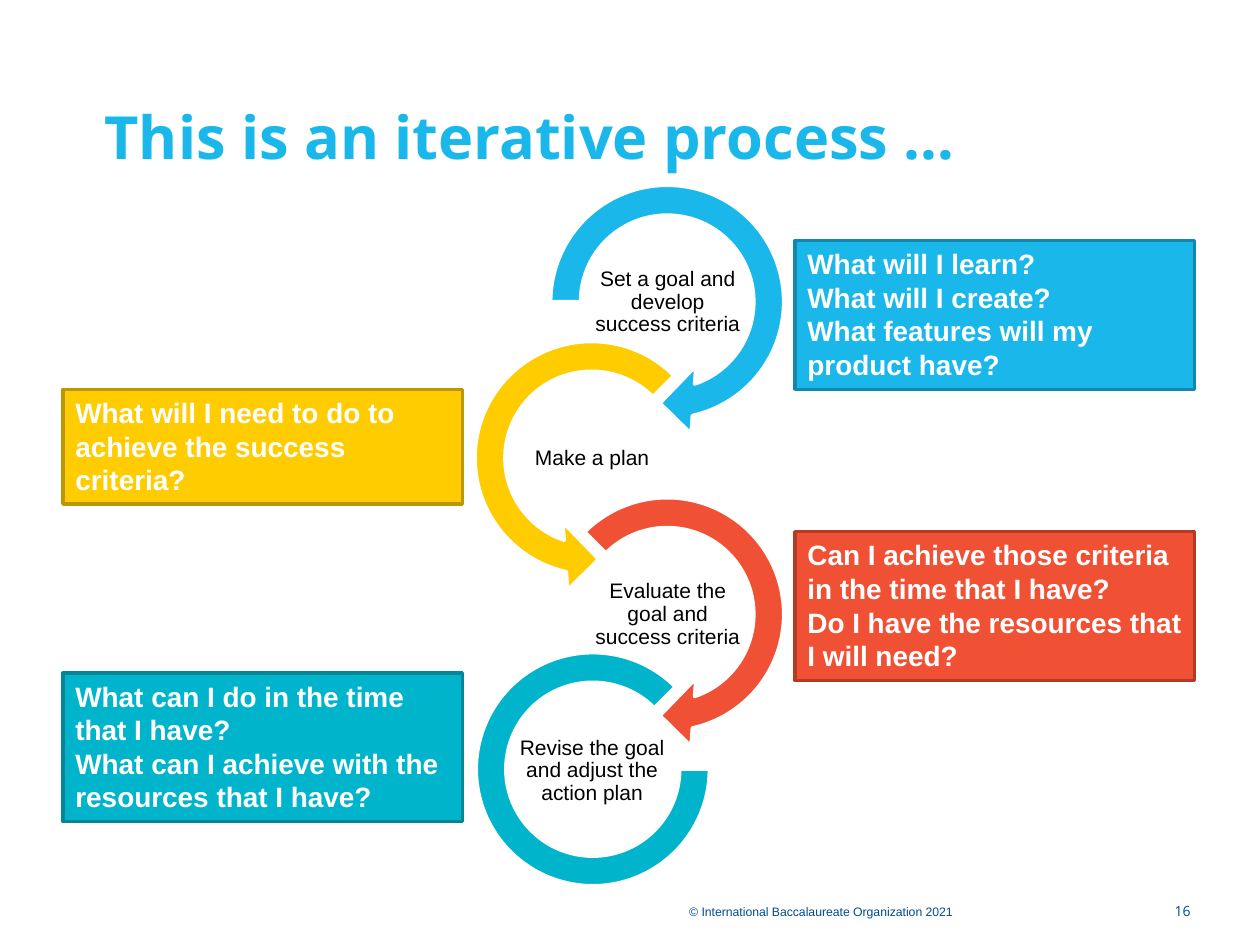
"""Builds the slide about an iterative goal-setting process."""
from pptx import Presentation
from pptx.dml.color import RGBColor
from pptx.enum import shapes, text
from pptx.util import Emu, Pt

SCALE = 9144
SHAPE = shapes.MSO_SHAPE
ALIGN = text.PP_ALIGN
ANCHOR = text.MSO_ANCHOR
NAVY, SKY, YELLOW, RED, TEAL = "004B8D", "1AB7EA", "FFCC00", "F05033", "00B5CB"
WHITE, BLACK = "FFFFFF", "000000"


def px(*lengths):
    return [Emu(length * SCALE) for length in lengths]


def color(value):
    return RGBColor.from_string(value)


class Deck:
    def __init__(self):
        self.presentation = Presentation()
        size = px(1000, 750)
        self.presentation.slide_width, self.presentation.slide_height = size
        self.slide = self.presentation.slides.add_slide(self.presentation.slide_layouts[5])

    def fill_text(self, frame, lines, size, ink, font="Arial", bold=False,
                  align=ALIGN.LEFT, spacing=1.0, anchor=ANCHOR.TOP, inset=None):
        frame.word_wrap = True
        frame.auto_size = text.MSO_AUTO_SIZE.NONE
        frame.vertical_anchor = anchor
        if inset is not None:
            frame.margin_left, frame.margin_top, frame.margin_right, frame.margin_bottom = px(*[inset] * 4)
        for index, line in enumerate(lines):
            paragraph = frame.add_paragraph() if index else frame.paragraphs[0]
            paragraph.alignment = align
            paragraph.line_spacing = spacing
            run = paragraph.add_run()
            run.text = line
            run.font.name, run.font.size, run.font.bold = font, Pt(size), bold
            run.font.color.rgb = color(ink)

    def title(self, box, wording):
        heading = self.slide.shapes.title
        heading.left, heading.top, heading.width, heading.height = px(*box)
        self.fill_text(heading.text_frame, [wording], 34, SKY, "Open Sans", True,
                       anchor=ANCHOR.BOTTOM, inset=0)

    def label(self, box, wording, size, ink, **style):
        frame = self.slide.shapes.add_textbox(*px(*box)).text_frame
        self.fill_text(frame, [wording], size, ink, **style)

    def shape(self, kind, box, fill, line, adjustments=()):
        figure = self.slide.shapes.add_shape(kind, *px(*box))
        figure.shadow.inherit = False
        figure.fill.solid()
        figure.fill.fore_color.rgb = color(fill)
        figure.line.color.rgb = color(line)
        figure.line.width = Pt(2)
        for index, value in enumerate(adjustments):
            figure.adjustments[index] = value
        return figure

    def questions(self, box, fill, line, lines):
        panel = self.shape(SHAPE.RECTANGLE, box, fill, line)
        self.fill_text(panel.text_frame, lines, 16, WHITE, bold=True)


def main():
    deck = Deck()
    deck.label((547, 713, 267, 13), "© International Baccalaureate Organization 2021",
               7, NAVY, spacing=1.43, inset=0)
    deck.title((83, 35, 862, 101), "This is an iterative process …")
    deck.label((917, 713, 28, 16), "16", 8, NAVY, font="Open Sans",
               align=ALIGN.RIGHT, spacing=1.25, inset=0)

    right, left = 422, 362
    steps = [
        ("Set a goal and develop success criteria", right, SKY,
         SHAPE.CIRCULAR_ARROW, (0.11, 11.42, 45, 108, 0.125)),
        ("Make a plan", left, YELLOW,
         SHAPE.LEFT_CIRCULAR_ARROW, (0.11, 11.42, 63, 189, 0.125)),
        ("Evaluate the goal and success criteria", right, RED,
         SHAPE.CIRCULAR_ARROW, (0.11, 11.42, 45, 135, 0.125)),
        ("Revise the goal and adjust the action plan", left, TEAL,
         SHAPE.BLOCK_ARC, (0, 189, 0.127)),
    ]
    for index, (step, x, fill, kind, adjustments) in enumerate(steps):
        y = 132 + 124 * index
        ring = (x + 16, y + 14, 185, 185) if kind == SHAPE.BLOCK_ARC else (x, y, 215, 215)
        deck.shape(kind, ring, fill, WHITE, adjustments)
        deck.label((x + 48, y + 78, 120, 60), step, 12, BLACK, align=ALIGN.CENTER,
                   spacing=0.9, anchor=ANCHOR.MIDDLE, inset=1)

    panels = [
        (631, 191, 118, SKY, "1387AD",
         ["What will I learn?", "What will I create?", "What features will my product have?"]),
        (50, 309, 91, YELLOW, "BD9700",
         ["What will I need to do to achieve the success criteria?"]),
        (631, 422, 118, RED, "B23B26",
         ["Can I achieve those criteria in the time that I have?",
          "Do I have the resources that I will need?"]),
        (50, 534, 118, TEAL, "008696",
         ["What can I do in the time that I have?",
          "What can I achieve with the resources that I have?"]),
    ]
    for x, y, height, fill, line, lines in panels:
        deck.questions((x, y, 317, height), fill, line, lines)
    deck.presentation.save("out.pptx")


if __name__ == "__main__":
    main()
